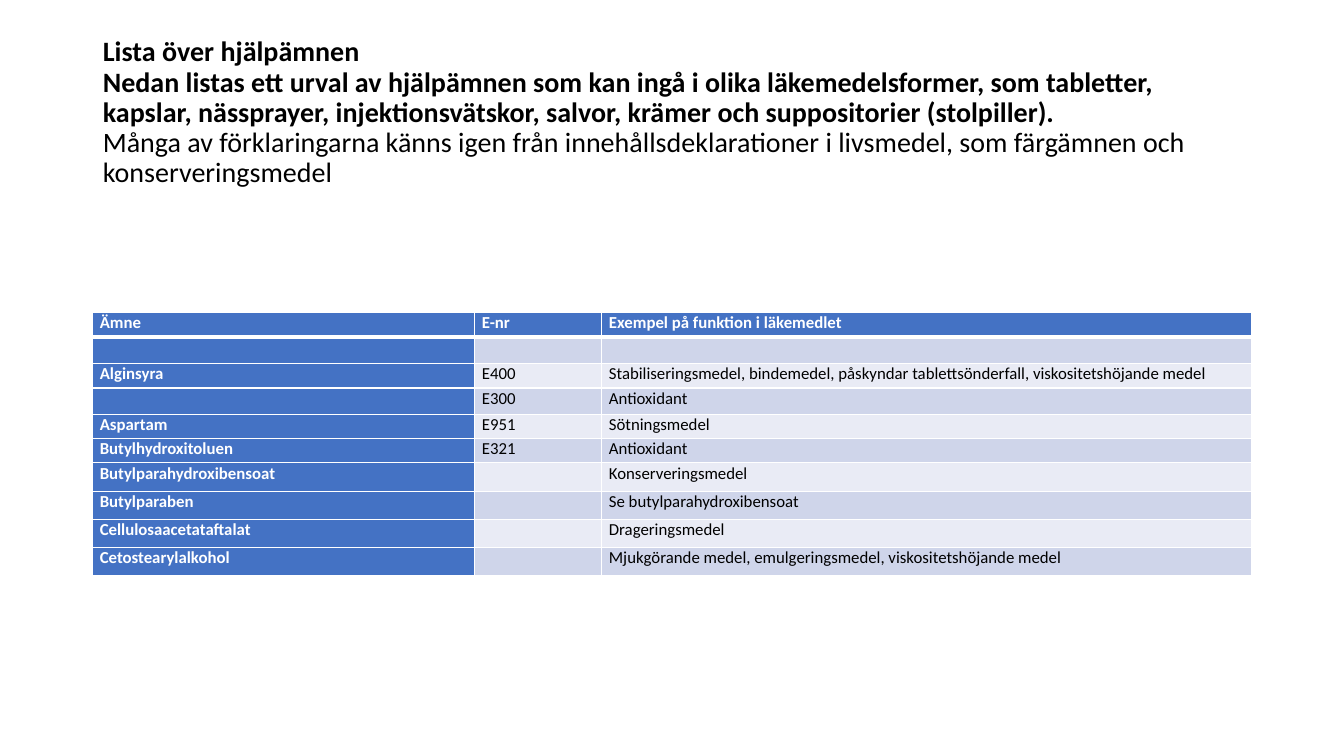
from lxml import etree
from pptx import Presentation
from pptx import util as u
from pptx.dml.color import RGBColor
from pptx.enum import text
from pptx.oxml import ns

HEADER = ("Ämne", "E-nr", "Exempel på funktion i läkemedlet")
SUBSTANCES = [
    ("", "", ""),
    ("Alginsyra", "E400", "Stabiliseringsmedel, bindemedel, påskyndar tablettsönderfall, viskositetshöjande medel"),
    ("", "E300", "Antioxidant"),
    ("Aspartam", "E951", "Sötningsmedel"),
    ("Butylhydroxitoluen", "E321", "Antioxidant"),
    ("Butylparahydroxibensoat", "", "Konserveringsmedel"),
    ("Butylparaben", "", "Se butylparahydroxibensoat"),
    ("Cellulosaacetataftalat", "", "Drageringsmedel"),
    ("Cetostearylalkohol", "", "Mjukgörande medel, emulgeringsmedel, viskositetshöjande medel"),
]
TITLE_LINES = [
    ("Lista över hjälpämnen", True),
    ("Nedan listas ett urval av hjälpämnen som kan ingå i olika läkemedelsformer, som tabletter, "
     "kapslar, nässprayer, injektionsvätskor, salvor, krämer och suppositorier (stolpiller).", True),
    ("Många av förklaringarna känns igen från innehållsdeklarationer i livsmedel, "
     "som färgämnen och konserveringsmedel", False),
]
COLUMN_WIDTHS = [3.79, 1.26, 6.44]
ROW_HEIGHTS = [0.24, 0.27] + [0.24] * 4 + [0.28] * 4


def colour(value):
    return RGBColor.from_string(value)


class SlideBuilder:
    """Builds the elements of one slide in a shared style."""

    font = "Calibri"
    white, black, blue = "FFFFFF", "000000", "4472C4"
    bands = ("CFD5EA", "E9EBF5")

    def __init__(self, presentation):
        self.slide = presentation.slides.add_slide(presentation.slide_layouts[5])

    def style(self, font, size, value, bold):
        font.name, font.size, font.bold = self.font, u.Pt(size), bold
        font.color.rgb = colour(value)

    def title(self, lines, left, top, width, height):
        shape = self.slide.shapes.title
        shape.left, shape.top = u.Inches(left), u.Inches(top)
        shape.width, shape.height = u.Inches(width), u.Inches(height)
        frame = shape.text_frame
        frame.word_wrap = True
        frame.auto_size = text.MSO_AUTO_SIZE.NONE
        frame.vertical_anchor = text.MSO_ANCHOR.MIDDLE
        paragraph = frame.paragraphs[0]
        paragraph.alignment = text.PP_ALIGN.LEFT
        paragraph.line_spacing = 0.9
        for index, (line, bold) in enumerate(lines):
            if index:
                paragraph.add_line_break()
            run = paragraph.add_run()
            run.text = line
            self.style(run.font, 20, self.black, bold)

    def borders(self, cell, bottom, top):
        properties = cell._tc.get_or_add_tcPr()
        for side, width in (("L", 1), ("R", 1), ("T", top), ("B", bottom)):
            line = etree.SubElement(properties, ns.qn(f"a:ln{side}"), w=str(u.Pt(width)))
            fill = etree.SubElement(line, ns.qn("a:solidFill"))
            etree.SubElement(fill, ns.qn("a:srgbClr"), val=self.white)

    def cell(self, cell, content, row, column):
        strong = row == 0 or column == 0
        self.borders(cell, 3 if row == 0 else 1, 3 if row == 1 else 1)
        cell.fill.solid()
        cell.fill.fore_color.rgb = colour(self.blue if strong else self.bands[(row - 1) % 2])
        cell.margin_left = u.Inches(0.07)
        cell.margin_top = cell.margin_right = cell.margin_bottom = u.Inches(0.03)
        cell.text = content
        paragraph = cell.text_frame.paragraphs[0]
        paragraph.line_spacing = u.Pt(12.6)
        self.style(paragraph.font, 12, self.white if strong else self.black, strong)

    def table(self, rows, left, top, widths, heights):
        table = self.slide.shapes.add_table(
            len(rows), len(widths), u.Inches(left), u.Inches(top),
            u.Inches(sum(widths)), u.Inches(sum(heights))).table
        for column, width in zip(table.columns, widths):
            column.width = u.Inches(width)
        for row, height in zip(table.rows, heights):
            row.height = u.Inches(height)
        for row, values in enumerate(rows):
            for column, value in enumerate(values):
                self.cell(table.cell(row, column), value, row, column)


def main():
    presentation = Presentation()
    presentation.slide_width, presentation.slide_height = u.Inches(13.33), u.Inches(7.5)
    builder = SlideBuilder(presentation)
    builder.title(TITLE_LINES, 0.92, 0.4, 11.5, 1.45)
    builder.table([HEADER] + SUBSTANCES, 0.92, 3.1, COLUMN_WIDTHS, ROW_HEIGHTS)
    presentation.save("out.pptx")


if __name__ == "__main__":
    main()
